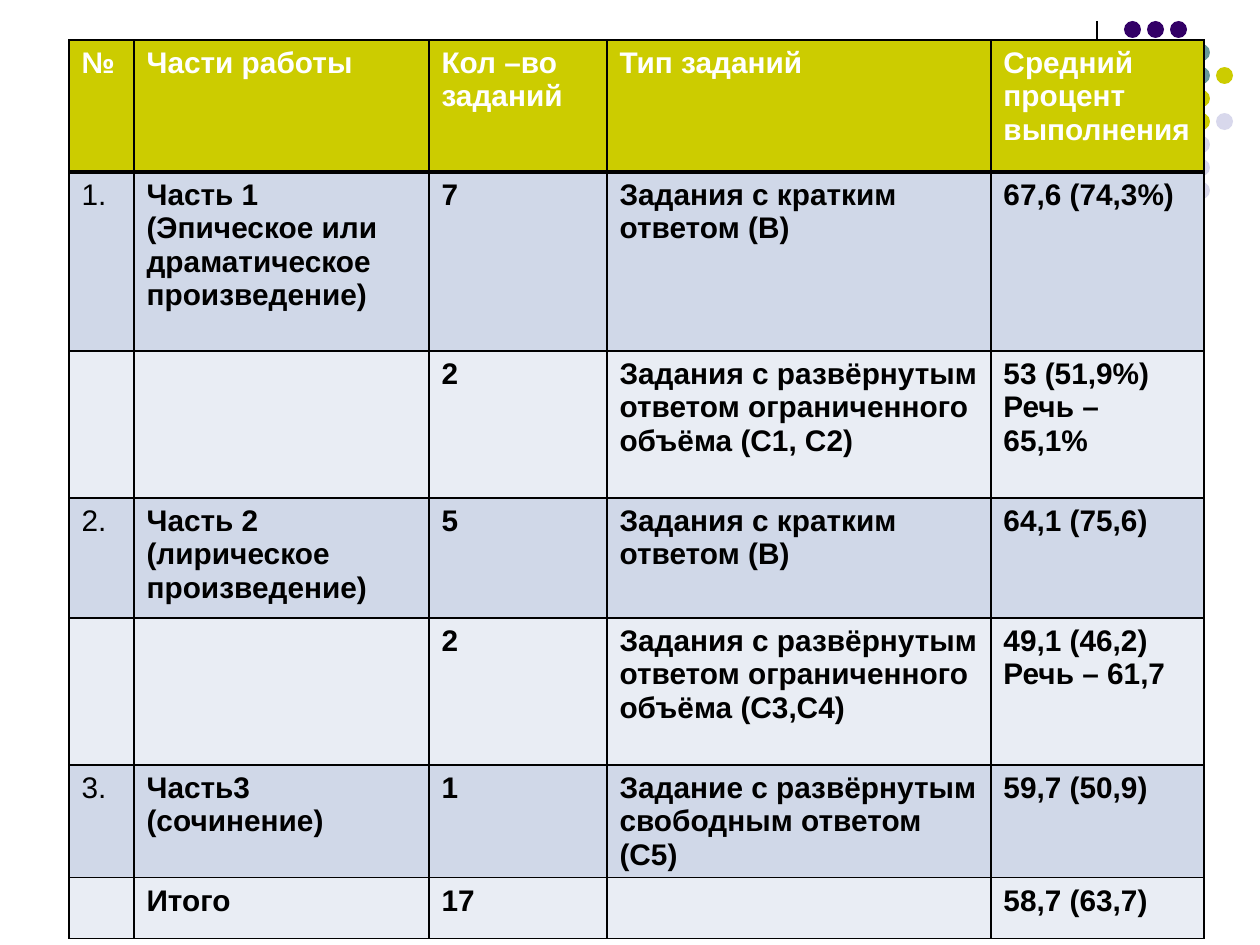
from dataclasses import dataclass
from pptx import Presentation
from pptx.dml.color import RGBColor as Rgb
from pptx.enum.shapes import MSO_CONNECTOR as Link, MSO_SHAPE as Shape
from pptx.oxml.ns import qn
from pptx.util import Pt
from lxml.etree import SubElement as Sub

SCALE = 914400 / 126


@dataclass(frozen=True)
class Theme:
    font: str = "Arial"
    size: int = 17
    ink: str = "000000"
    head: str = "CCCC00"
    light: str = "FFFFFF"
    bands: tuple = ("D0D8E8", "E9EDF4")
    thin: int = 1
    thick: int = 3
    rule: float = 0.75


THEME = Theme()
DOTS = {"P": "330066", "T": "669999", "Y": THEME.head, "L": "D8D8EC"}
GRID = ["PPP", "PPPT", "PPTTY", "PTTY", "TTYYL", "TYYL", "YYLL", " L L"]
COLS = [65, 295, 178, 384, 213]
ROWS = [132, 179, 147, 120, 147, 112, 61]
CELLS = [
    ["№", "Части работы", "Кол –во\nзаданий", "Тип заданий",
     "Средний процент выполнения"],
    ["1.", "Часть 1 (Эпическое или драматическое произведение)", "7",
     "Задания с кратким ответом (В)", "67,6 (74,3%)"],
    ["", "", "2",
     "Задания с развёрнутым ответом ограниченного объёма (С1, С2)",
     "53 (51,9%) Речь – 65,1%"],
    ["2.", "Часть 2 (лирическое произведение)", "5",
     "Задания с кратким ответом (В)", "64,1 (75,6)"],
    ["", "", "2",
     "Задания с развёрнутым ответом ограниченного объёма (С3,С4)",
     "49,1 (46,2)\nРечь – 61,7"],
    ["3.", "Часть3 (сочинение)", "1",
     "Задание с развёрнутым свободным ответом (С5)", "59,7 (50,9)"],
    ["", "Итого", "17", "", "58,7 (63,7)"],
]


def px(num):
    return round(num * SCALE)


def paint(fill, color):
    fill.solid()
    fill.fore_color.rgb = Rgb.from_string(color)


def edge(cell, side, width):
    line = Sub(cell._tc.get_or_add_tcPr(), qn(f"a:ln{side}"), w=str(Pt(width)))
    Sub(Sub(line, qn("a:solidFill")), qn("a:srgbClr"), val=THEME.ink)


def add_dots(slide, left, top, height):
    rule = slide.shapes.add_connector(
        Link.STRAIGHT, px(left), px(top), px(left), px(top + height))
    rule.line.width = Pt(THEME.rule)
    paint(rule.line.fill, THEME.ink)
    Sub(rule._element.spPr, qn("a:effectLst"))
    group = slide.shapes.add_group_shape()
    step, size, gap = 23, 17, 27
    for row, marks in enumerate(GRID):
        for col, mark in enumerate(marks):
            if mark == " ":
                continue
            dot = group.shapes.add_shape(
                Shape.OVAL, px(left + gap + col * step), px(top + row * step),
                px(size), px(size))
            dot.shadow.inherit = False
            dot.line.fill.background()
            paint(dot.fill, DOTS[mark])


def fill_cell(cell, text, row, col):
    head = row == 0
    widths = {"L": THEME.thin, "R": THEME.thin,
              "T": THEME.thick if row == 1 else THEME.thin,
              "B": THEME.thick if head else THEME.thin}
    for side, width in widths.items():
        edge(cell, side, width)
    paint(cell.fill, THEME.head if head else THEME.bands[(row - 1) % 2])
    cell.text = text
    style = {"name": THEME.font, "size": Pt(THEME.size),
             "bold": head or col > 0}
    for para in cell.text_frame.paragraphs:
        for key, value in style.items():
            setattr(para.font, key, value)
        for run in para.runs:
            for key, value in style.items():
                setattr(run.font, key, value)
            paint(run.font.fill, THEME.light if head else THEME.ink)


def add_scores(slide, left, top):
    table = slide.shapes.add_table(
        len(ROWS), len(COLS), px(left), px(top),
        px(sum(COLS)), px(sum(ROWS))).table
    for col, width in zip(table.columns, COLS):
        col.width = px(width)
    for row, height in zip(table.rows, ROWS):
        row.height = px(height)
    for row, texts in enumerate(CELLS):
        for col, text in enumerate(texts):
            fill_cell(table.cell(row, col), text, row, col)


def main():
    deck = Presentation()
    deck.slide_width, deck.slide_height = px(1260), px(945)
    slide = deck.slides.add_slide(deck.slide_layouts[6])
    paint(slide.background.fill, THEME.light)
    add_dots(slide, 1097, 21, 210)
    add_scores(slide, 69, 40)
    deck.save("out.pptx")


if __name__ == "__main__":
    main()
